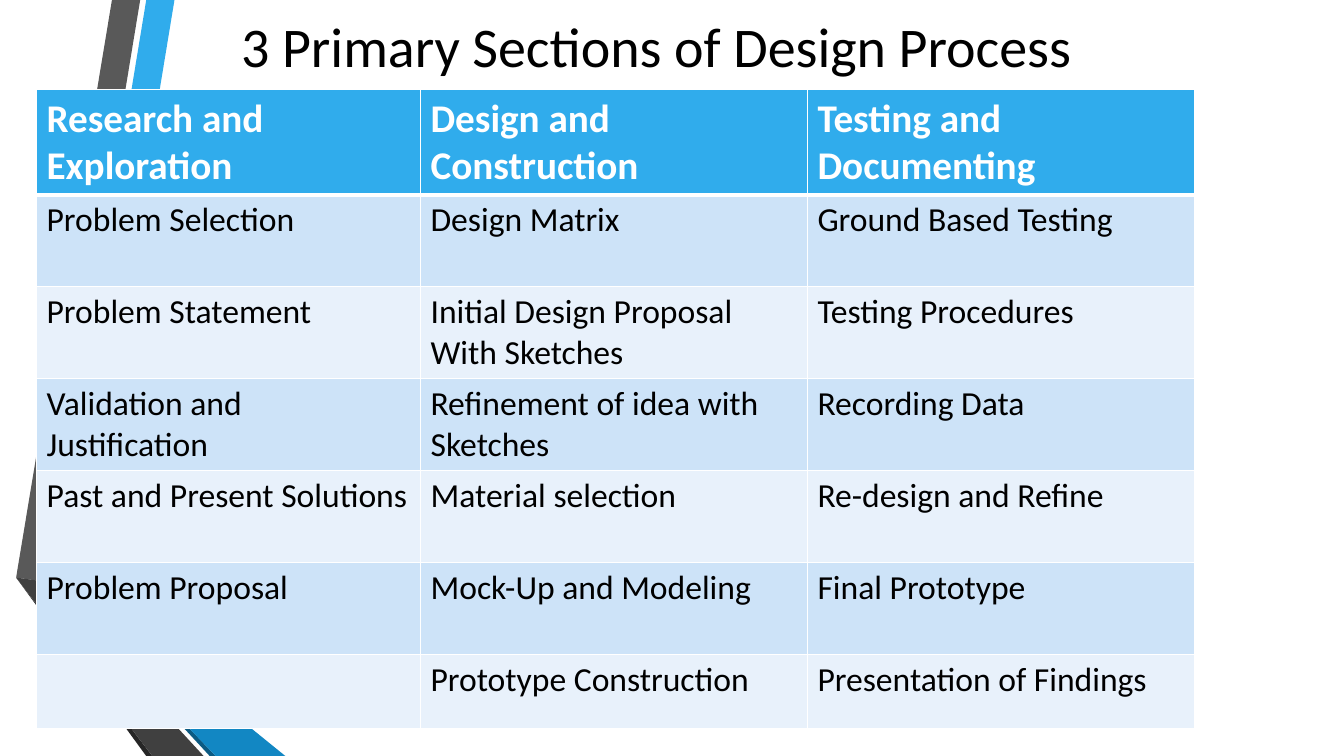
import pptx
import pptx.dml.color
import pptx.enum.text
import pptx.oxml
import pptx.oxml.ns
import pptx.util

RGB = pptx.dml.color.RGBColor
BLACK = RGB(0x00, 0x00, 0x00)
WHITE = RGB(0xFF, 0xFF, 0xFF)
BLUE = RGB(0x30, 0xAC, 0xEC)
MID_BLUE = RGB(0x12, 0x87, 0xC3)
DEEP_BLUE = RGB(0x0C, 0x5A, 0x82)
GREY = RGB(0x59, 0x59, 0x59)
DARK_GREY = RGB(0x40, 0x40, 0x40)
DEEP_GREY = RGB(0x26, 0x26, 0x26)
BANDS = (RGB(0xE8, 0xF1, 0xFB), RGB(0xCD, 0xE3, 0xF8))

FONT = "Calibri"
TITLE_FORMAT = {"name": FONT, "size": pptx.util.Pt(40), "bold": False}
HEADER_FORMAT = {"name": FONT, "size": pptx.util.Pt(28), "bold": True}
BODY_FORMAT = {"name": FONT, "size": pptx.util.Pt(24), "bold": False}

# Boxes: left, top, width, height in percent of the slide
RIBBON_BOX = (0, 0, 100, 100)
TITLE_BOX = (5.7, 0, 86.25, 11.87)
TABLE_BOX = (2.72, 11.87, 86.15, 84.5)

# Ribbon outlines, in percent of their box
RIBBONS = (
    (BLUE, ((3.75, 77.07), (5.78, 77.73), (12.98, 0), (10.88, 0))),
    (GREY, ((10.43, 0), (8.33, 0), (1.2, 76.4), (3.3, 76.93))),
    (DEEP_GREY, ((1.2, 76.4), (10.88, 100), (11.33, 100))),
    (DEEP_BLUE, ((3.75, 77.2), (15.6, 100), (16.05, 100))),
    (MID_BLUE, ((3.75, 77.2), (16.05, 100), (21.23, 100), (5.78, 77.73),
                (3.75, 77.07))),
    (DARK_GREY, ((15.15, 100), (3.6, 77.73), (3.3, 76.93), (1.2, 76.4),
                 (11.33, 100))),
)

SECTIONS = (
    ("Research and Exploration", "Design and Construction",
     "Testing and Documenting"),
    ("Problem Selection", "Design Matrix", "Ground Based Testing"),
    ("Problem Statement", "Initial Design Proposal\nWith Sketches",
     "Testing Procedures"),
    ("Validation and Justification", "Refinement of idea with Sketches",
     "Recording Data"),
    ("Past and Present Solutions", "Material selection",
     "Re-design and Refine"),
    ("Problem Proposal", "Mock-Up and Modeling", "Final Prototype"),
    ("", "Prototype Construction", "Presentation of Findings"),
)
COLUMN_WEIGHTS = (3.81, 3.84, 3.84)
ROW_WEIGHTS = (1.04,) + (0.91,) * 5 + (0.73,)


def scale_box(deck, box):
    """Turn percentages of the slide into lengths."""
    sides = (deck.slide_width, deck.slide_height) * 2
    return [round(side * share / 100) for side, share in zip(sides, box)]


def format_text(frame, formats, color):
    for para in frame.paragraphs:
        for span in para.runs:
            for name, value in formats.items():
                setattr(span.font, name, value)
            span.font.color.rgb = color


def set_borders(cell, widths):
    """Draw white borders, which stand before the fill in the cell."""
    properties = cell._tc.get_or_add_tcPr()
    for index, (side, points) in enumerate(widths.items()):
        line = pptx.oxml.parse_xml(
            f'<a:ln{side} {pptx.oxml.ns.nsdecls("a")} '
            f'w="{pptx.util.Pt(points)}"><a:solidFill>'
            f'<a:srgbClr val="{WHITE}"/></a:solidFill></a:ln{side}>')
        properties.insert(index, line)


def add_ribbons(page, box):
    left, top, width, height = box
    for color, outline in RIBBONS:
        points = [(left + width * x / 100, top + height * y / 100)
                  for x, y in outline]
        builder = page.shapes.build_freeform(*points[0], scale=1.0)
        builder.add_line_segments(points[1:], close=True)
        ribbon = builder.convert_to_shape()
        ribbon.shadow.inherit = False
        ribbon.fill.solid()
        ribbon.fill.fore_color.rgb = color
        ribbon.line.fill.background()


def add_title(page, box):
    frame = page.shapes.add_textbox(*box).text_frame
    frame.word_wrap = True
    frame.vertical_anchor = pptx.enum.text.MSO_ANCHOR.MIDDLE
    frame.text = "3 Primary Sections of Design Process"
    frame.paragraphs[0].alignment = pptx.enum.text.PP_ALIGN.CENTER
    format_text(frame, TITLE_FORMAT, BLACK)


def add_sections_table(page, box):
    width, height = box[2:]
    table = page.shapes.add_table(
        len(SECTIONS), len(COLUMN_WEIGHTS), *box).table
    for column, weight in zip(table.columns, COLUMN_WEIGHTS):
        column.width = round(width * weight / sum(COLUMN_WEIGHTS))
    for row, weight in zip(table.rows, ROW_WEIGHTS):
        row.height = round(height * weight / sum(ROW_WEIGHTS))
    for row_index, texts in enumerate(SECTIONS):
        header = row_index == 0
        for column_index, text in enumerate(texts):
            cell = table.cell(row_index, column_index)
            cell.text = text
            cell.fill.solid()
            cell.fill.fore_color.rgb = BLUE if header else BANDS[row_index % 2]
            format_text(cell.text_frame,
                        HEADER_FORMAT if header else BODY_FORMAT,
                        WHITE if header else BLACK)
            set_borders(cell, {"L": 1, "R": 1, "T": 3 if row_index == 1 else 1,
                               "B": 3 if header else 1})


def main():
    deck = pptx.Presentation()
    deck.slide_width = pptx.util.Inches(13.33)
    deck.slide_height = pptx.util.Inches(7.5)
    page = deck.slides.add_slide(deck.slide_layouts[6])
    add_ribbons(page, scale_box(deck, RIBBON_BOX))
    add_title(page, scale_box(deck, TITLE_BOX))
    add_sections_table(page, scale_box(deck, TABLE_BOX))
    deck.save("out.pptx")


if __name__ == "__main__":
    main()
